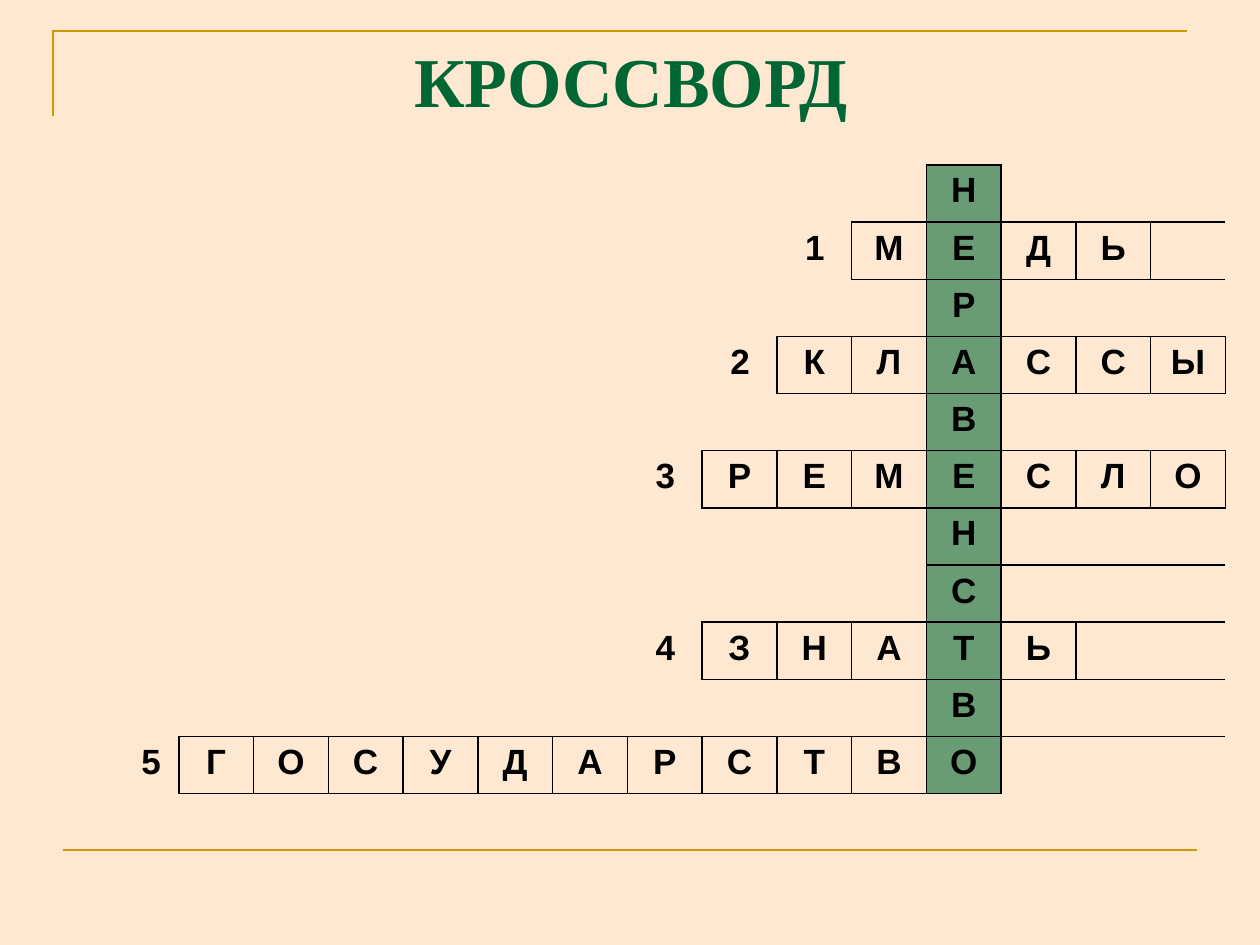
from dataclasses import dataclass

from pptx import Presentation
from pptx.dml.color import RGBColor
from pptx.enum.shapes import MSO_CONNECTOR
from pptx.enum.text import MSO_ANCHOR, PP_ALIGN
from pptx.oxml import parse_xml
from pptx.oxml.ns import nsdecls, qn
from pptx.util import Emu, Inches, Pt

LINE = MSO_CONNECTOR.STRAIGHT
MIDDLE = MSO_ANCHOR.MIDDLE
CENTER, RIGHT = PP_ALIGN.CENTER, PP_ALIGN.RIGHT
NO_GRID = "{2D5ABB26-0587-4C30-8999-92F81FD0307C}"


@dataclass(frozen=True)
class Theme:
    paper = RGBColor(0xFF, 0xE8, 0xD1)
    green = RGBColor(0x00, 0x66, 0x33)
    gold = RGBColor(0xCC, 0x99, 0x00)
    ink = RGBColor(0, 0, 0)
    title = Pt(40)
    letter = Pt(20)
    rule = Pt(1.5)
    border = Pt(1)
    opacity = 59000


theme = Theme()
PX = 914400 / 126


def px(n):
    return Emu(round(n * PX))


def dress(cell, sides="", text="", align=CENTER, key=False):
    """Give a cell its borders (letters from LRTB), fill and text."""
    props = cell._tc.get_or_add_tcPr()
    for side in sides:
        props.append(parse_xml(
            f'<a:ln{side} {nsdecls("a")} w="{theme.border}"><a:solidFill>'
            f'<a:srgbClr val="{theme.ink}"/></a:solidFill></a:ln{side}>'))
    cell.fill.solid()
    cell.fill.fore_color.rgb = theme.green if key else theme.paper
    if key:
        color = props.find(qn("a:solidFill"))[0]
        color.append(parse_xml(
            f'<a:alpha {nsdecls("a")} val="{theme.opacity}"/>'))
    if text:
        cell.text = text
        para = cell.text_frame.paragraphs[0]
        para.alignment = align
        font = para.font
        font.name, font.size, font.bold = "Arial", theme.letter, True
        font.color.rgb = theme.ink


deck = Presentation()
deck.slide_width, deck.slide_height = Inches(10), Inches(7.5)
slide = deck.slides.add_slide(deck.slide_layouts[6])
slide.background.fill.solid()
slide.background.fill.fore_color.rgb = theme.paper
shapes = slide.shapes

# Gold frame
path = shapes.build_freeform(53, 116, scale=PX)
path.add_line_segments([(53, 31), (1187, 31)], close=False)
corner = path.convert_to_shape()
corner.fill.background()
corner.shadow.inherit = False
base = shapes.add_connector(LINE, px(63), px(850), px(1197), px(850))
base._element.spPr.append(parse_xml(f'<a:effectLst {nsdecls("a")}/>'))
for rule in (corner, base):
    rule.line.color.rgb = theme.gold
    rule.line.width = theme.rule

# Title
box = shapes.add_textbox(px(64), px(45), px(1134), px(59))
frame = box.text_frame
frame.word_wrap = True
frame.vertical_anchor = MIDDLE
frame.margin_top, frame.margin_bottom = px(10), 0
frame.text = "КРОССВОРД"
para = frame.paragraphs[0]
para.alignment = CENTER
font = para.font
font.name, font.size, font.bold = "Times New Roman", theme.title, True
font.color.rgb = theme.green

# Crossword grid
ROWS, COLS, KEY_COL = 11, 15, 11
KEY = "НЕРАВЕНСТВО"
# row: number, word, letters before the key column
WORDS = {
    1: ("1", "МЕДЬ", 1),
    3: ("2", "КЛАССЫ", 2),
    5: ("3", "РЕМЕСЛО", 3),
    8: ("4", "ЗНАТЬ", 3),
    10: ("5", "ГОСУДАРСТВО", 10),
}
# row, column, rows, columns
BLANKS = [
    (0, 0, 1, 11), (0, 12, 1, 3), (1, 0, 4, 6), (1, 6, 2, 3),
    (2, 9, 1, 2), (2, 12, 1, 3), (3, 6, 2, 2), (4, 8, 1, 3),
    (4, 12, 1, 3), (5, 0, 1, 8), (6, 0, 2, 6), (6, 6, 2, 5),
    (6, 12, 1, 3), (7, 12, 1, 3), (8, 0, 1, 8), (8, 13, 1, 2),
    (9, 0, 1, 11), (9, 12, 1, 3), (10, 12, 1, 3),
]
wide, high = px(1122), px(629)
grid = shapes.add_table(ROWS, COLS, px(104), px(165), wide, high).table
grid.first_row = grid.horz_banding = False
grid._tbl.tblPr.find(qn("a:tableStyleId")).text = NO_GRID
for col in grid.columns:
    col.width = Emu(wide // COLS)
for row in grid.rows:
    row.height = Emu(high // ROWS)

for top, left, down, over in BLANKS:
    cell = grid.cell(top, left)
    cell.merge(grid.cell(top + down - 1, left + over - 1))
    under = left > KEY_COL and top - 1 in WORDS
    dress(cell, "T" if under else "")
dress(grid.cell(1, COLS - 1), "B")

for row, char in enumerate(KEY):
    dress(grid.cell(row, KEY_COL), "LRTB", char, key=True)

for row, (num, word, lead) in WORDS.items():
    start = KEY_COL - lead
    for col, char in enumerate(word, start):
        if col != KEY_COL:
            closed = col > KEY_COL or row == ROWS - 1
            dress(grid.cell(row, col), "LRTB" if closed else "LRT", char)
    cell = grid.cell(row, start - 1)
    if cell.is_spanned:
        cell = grid.cell(row, 0)
    dress(cell, text=num, align=RIGHT)
    cell.margin_right = px(18 if start == 1 else 27)

deck.save("out.pptx")
